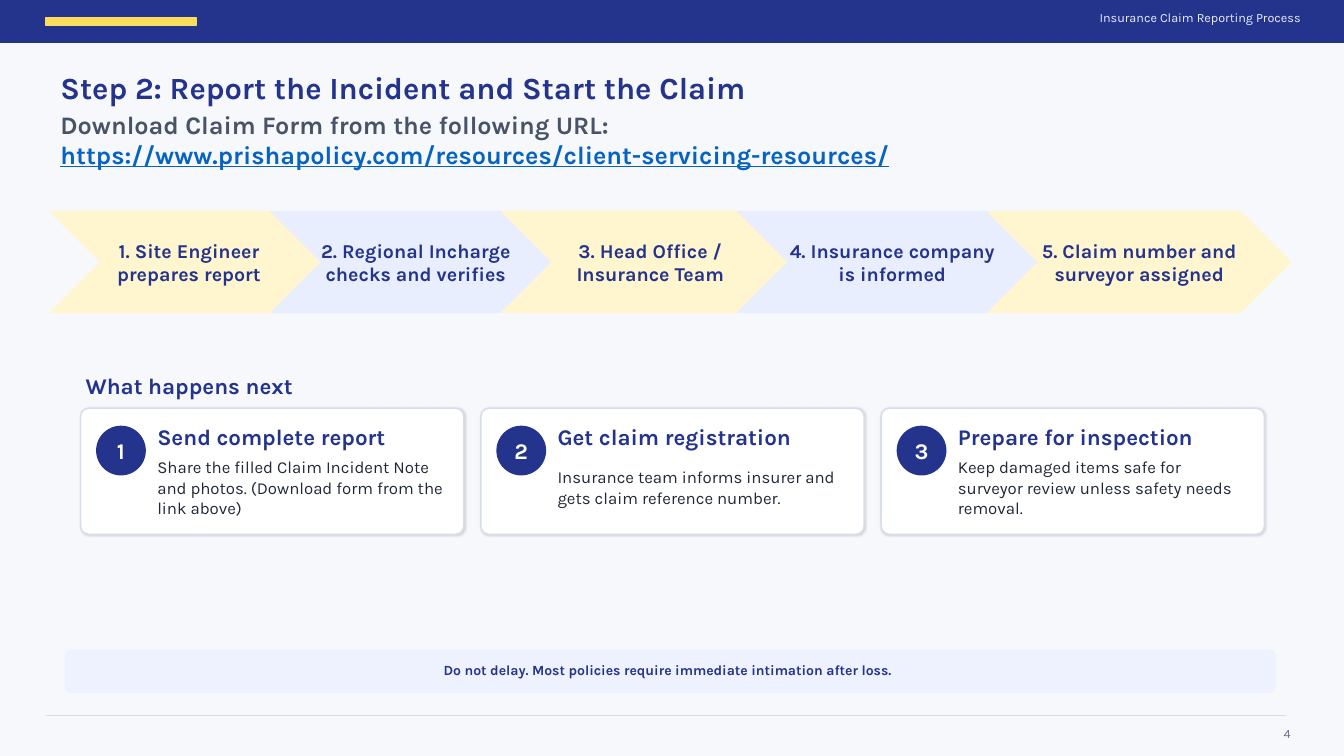
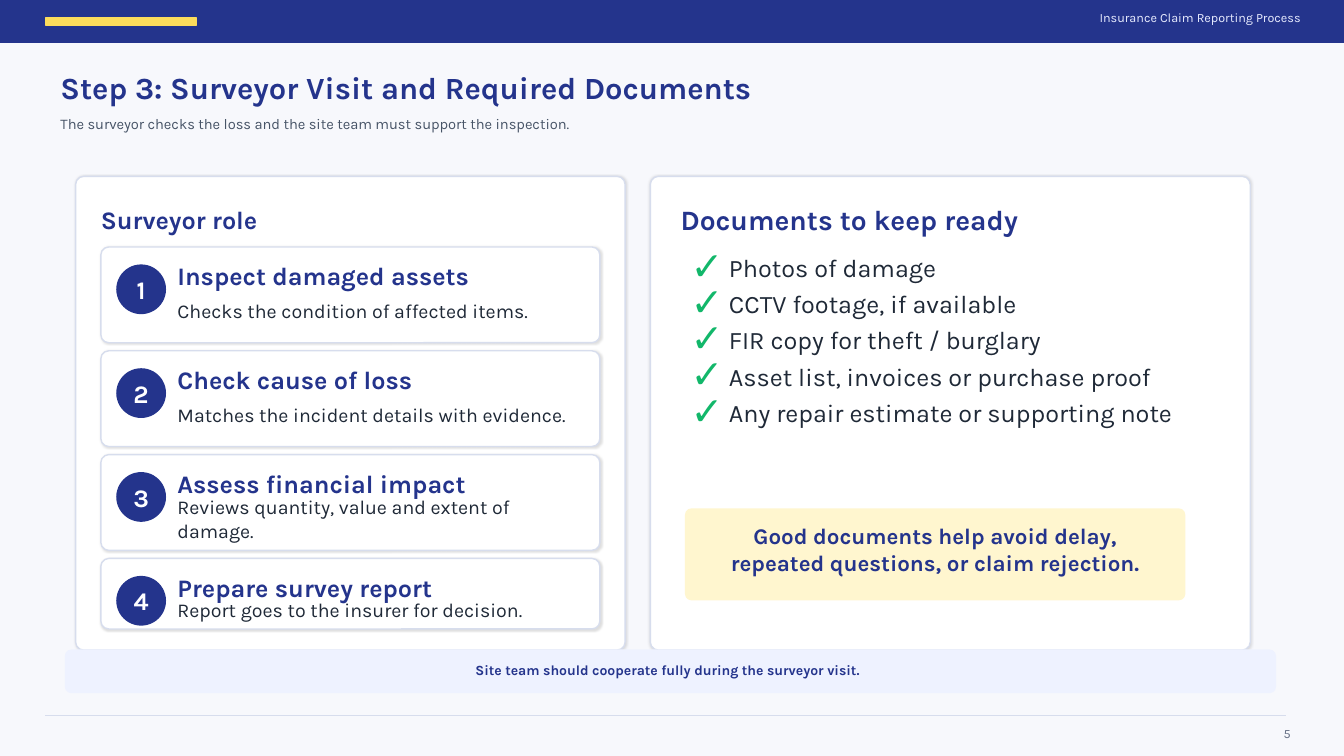
from typing import NamedTuple

from lxml import etree
from pptx import Presentation
from pptx import util as u
from pptx.dml.color import RGBColor
from pptx.enum import shapes, text
from pptx.oxml.ns import qn

NAVY = RGBColor(0x24, 0x34, 0x8C)
GOLD = RGBColor(0xFC, 0xDC, 0x5C)
CREAM = RGBColor(0xFF, 0xF6, 0xCF)
PALE_BLUE = RGBColor(0xE9, 0xEE, 0xFF)
NOTE_BLUE = RGBColor(0xEE, 0xF2, 0xFF)
HEADER_TEXT = RGBColor(0xE8, 0xEC, 0xFF)
BACKGROUND = RGBColor(0xF7, 0xF8, 0xFC)
RULE = RGBColor(0xD7, 0xDD, 0xED)
SLATE = RGBColor(0x47, 0x54, 0x67)
GREY = RGBColor(0x66, 0x70, 0x85)
INK = RGBColor(0x1F, 0x29, 0x37)
GREEN = RGBColor(0x12, 0xB7, 0x6A)
LINK = RGBColor(0x05, 0x63, 0xC1)
WHITE = RGBColor(0xFF, 0xFF, 0xFF)

FONT = "Karla"
WIDTH, HEIGHT = 13.33, 7.5
LEFT, CENTER, RIGHT = text.PP_ALIGN.LEFT, text.PP_ALIGN.CENTER, text.PP_ALIGN.RIGHT
KIND = shapes.MSO_SHAPE


class Box(NamedTuple):
    """Area of a slide in inches."""
    x: float
    y: float
    w: float
    h: float

    def inner(self, dx, dy, w, h):
        """Return an area placed from this one's top left corner."""
        return Box(self.x + dx, self.y + dy, w, h)

    def emu(self):
        """Return left, top, width and height as lengths."""
        return [u.Inches(length) for length in self]


def style(font, size, color, bold=False):
    """Set typeface, size, colour and weight."""
    font.name, font.size, font.bold = FONT, u.Pt(size), bold
    font.color.rgb = color


def write(frame, lines, size, color, bold=False, align=LEFT, margins=(0, 0, 0, 0), wrap=True):
    """Fill a text frame with equally formatted, vertically centred paragraphs."""
    frame.word_wrap = wrap
    frame.auto_size = text.MSO_AUTO_SIZE.NONE
    frame.vertical_anchor = text.MSO_ANCHOR.MIDDLE
    (frame.margin_left, frame.margin_top,
     frame.margin_right, frame.margin_bottom) = [u.Inches(m) for m in margins]
    frame.text = lines
    for paragraph in frame.paragraphs:
        paragraph.alignment = align
        style(paragraph.font, size, color, bold)
    return frame


def label(slide, box, lines, size, color, bold=False, align=LEFT):
    """Add a text box."""
    frame = slide.shapes.add_textbox(*box.emu()).text_frame
    return write(frame, lines, size, color, bold, align)


def block(slide, kind, box, fill, edge=None, radius=None):
    """Add a flat shape with an optional corner radius in inches."""
    shape = slide.shapes.add_shape(kind, *box.emu())
    shape.shadow.inherit = False
    shape.fill.solid()
    shape.fill.fore_color.rgb = fill
    shape.line.color.rgb = edge or fill
    shape.line.width = u.Pt(1)
    if radius:
        shape.adjustments[0] = radius / min(box.w, box.h)
    return shape


def panel(slide, box):
    """Add a white rounded panel with a soft shadow."""
    shape = block(slide, KIND.ROUNDED_RECTANGLE, box, WHITE, RULE, 0.08)
    effects = shape.element.spPr.find(qn("a:effectLst"))
    shadow = etree.SubElement(effects, qn("a:outerShdw"), blurRad=str(u.Pt(1.5)),
                              dist=str(u.Pt(0.5)), dir="2700000", algn="bl", rotWithShape="0")
    color = etree.SubElement(shadow, qn("a:srgbClr"), val="000000")
    etree.SubElement(color, qn("a:alpha"), val="12000")


def build_layout(layout, slide):
    """Draw the shared header and footer rule and move them to the layout."""
    layout.background.fill.solid()
    layout.background.fill.fore_color.rgb = BACKGROUND
    own = len(slide.shapes)
    block(slide, KIND.RECTANGLE, Box(0, 0, WIDTH, 0.42), NAVY)
    block(slide, KIND.RECTANGLE, Box(0.45, 0.18, 1.5, 0.07), GOLD)
    label(slide, Box(9.2, 0.08, 3.7, 0.18), "Insurance Claim Reporting Process",
          9, HEADER_TEXT, align=RIGHT)
    rule = slide.shapes.add_connector(
        shapes.MSO_CONNECTOR.STRAIGHT,
        u.Inches(0.45), u.Inches(7.1), u.Inches(12.75), u.Inches(7.1))
    rule.line.color.rgb = RULE
    rule.line.width = u.Pt(1)
    etree.SubElement(rule.element.spPr, qn("a:effectLst"))
    for number, shape in enumerate(list(slide.shapes)[own:], start=20):
        shape.element.xpath(".//p:cNvPr")[0].set("id", str(number))
        layout.shapes.element.append(shape.element)


def frame_slide(slide, heading, note, number):
    """Place the title, the closing note bar and the page number."""
    title = slide.shapes.title
    title.left, title.top, title.width, title.height = Box(0.6, 0.65, 8.8, 0.42).emu()
    write(title.text_frame, heading, 22, NAVY, True)
    bar = block(slide, KIND.ROUNDED_RECTANGLE, Box(0.65, 6.45, 12, 0.42), NOTE_BLUE, radius=0.06)
    write(bar.text_frame, note, 10, NAVY, True, CENTER, (0, 0, 0.06, 0.02))
    page = label(slide, Box(12.55, 7.15, 0.35, 0.18), number, 9, GREY, align=RIGHT)
    page.vertical_anchor = text.MSO_ANCHOR.TOP
    page.margin_right = u.Inches(0.1)
    page.margin_top = u.Inches(0.05)


def numbered_card(slide, box, number, heading, body, heading_size, body_size):
    """Place a card with a number disc, a heading and a body text."""
    panel(slide, box)
    disc = block(slide, KIND.OVAL, box.inner(0.16, 0.18, 0.48, 0.48), NAVY)
    write(disc.text_frame, str(number), heading_size, WHITE, True, CENTER, wrap=False)
    column = box.w - 0.92
    label(slide, box.inner(0.76, 0.16, column, 0.25), heading, heading_size, NAVY, True)
    label(slide, box.inner(0.76, 0.45, column, box.h - 0.58), body, body_size, INK)


def process_chain(slide, top, steps):
    """Place overlapping chevrons in alternating colours."""
    for index, (left, width, shift, caption) in enumerate(steps):
        step = block(slide, KIND.CHEVRON, Box(left, top, width, 1), (CREAM, PALE_BLUE)[index % 2])
        write(step.text_frame, caption, 14, NAVY, True, CENTER, (0, 0, shift, 0), wrap=False)


def check_list(slide, box, items, pitch):
    """Place a list with green check marks at a fixed line pitch in points."""
    frame = label(slide, box, "\n".join(items), 18, INK)
    for paragraph in frame.paragraphs:
        paragraph.line_spacing = u.Pt(pitch)
        props = paragraph._p.get_or_add_pPr()
        props.set("marL", str(u.Inches(0.38)))
        props.set("indent", str(-u.Inches(0.38)))
        bullet_color = etree.Element(qn("a:buClr"))
        etree.SubElement(bullet_color, qn("a:srgbClr"), val=str(GREEN))
        bullet_size = etree.Element(qn("a:buSzPct"), val="156000")
        bullet_font = etree.Element(qn("a:buFont"), typeface=FONT)
        bullet = etree.Element(qn("a:buChar"), char="✓")
        spacing = props.find(qn("a:lnSpc"))
        for setting in (bullet, bullet_font, bullet_size, bullet_color):
            spacing.addnext(setting)


def report_slide(slide):
    """Build the slide on reporting the incident."""
    frame_slide(slide, "Step 2: Report the Incident and Start the Claim",
                "Do not delay. Most policies require immediate intimation after loss.", "4")
    download = label(slide, Box(0.6, 1.08, 9.6, 0.61),
                     "Download Claim Form from the following URL: ", 18, SLATE, True)
    address = download.paragraphs[0].add_run()
    address.text = "https://www.prishapolicy.com/resources/client-servicing-resources/"
    address.font.color.rgb = LINK
    address.font.underline = True
    process_chain(slide, 2.1, [
        (0.5, 3, 0.25, "1. Site Engineer\nprepares report"),
        (2.69, 3.14, 0.27, "2. Regional Incharge\nchecks and verifies"),
        (4.98, 3.21, 0.27, "3. Head Office /\nInsurance Team"),
        (7.32, 3.34, 0.28, "4. Insurance company\nis informed"),
        (9.8, 3, 0, "5. Claim number and\nsurveyor assigned"),
    ])
    label(slide, Box(0.85, 3.7, 2.4, 0.25), "What happens next", 16, NAVY, True)
    actions = [
        ("Send complete report", "Share the filled Claim Incident Note and photos. "
                                 "(Download form from the link above)"),
        ("Get claim registration",
         "Insurance team informs insurer and gets claim reference number."),
        ("Prepare for inspection",
         "Keep damaged items safe for surveyor review unless safety needs removal."),
    ]
    for index, (heading, body) in enumerate(actions):
        card = Box(0.8 + 3.97 * index, 4.05, 3.8, 1.25)
        numbered_card(slide, card, index + 1, heading, body, 16, 12)


def surveyor_role(slide, box):
    """Place the panel with the surveyor's four tasks."""
    panel(slide, box)
    label(slide, box.inner(0.25, 0.3, 1.8, 0.25), "Surveyor role", 18, NAVY, True)
    tasks = [
        ("Inspect damaged assets", "Checks the condition of affected items.", 0.95),
        ("Check cause of loss", "Matches the incident details with evidence.", 0.95),
        ("Assess financial impact", "Reviews quantity, value and extent of damage.", 0.95),
        ("Prepare survey report", "Report goes to the insurer for decision.", 0.7),
    ]
    for index, (heading, body, height) in enumerate(tasks):
        card = box.inner(0.25, 0.7 + 1.03 * index, box.w - 0.5, height)
        numbered_card(slide, card, index + 1, heading, body, 18, 14)


def required_documents(slide, box):
    """Place the panel with the document checklist and its callout."""
    panel(slide, box)
    label(slide, box.inner(0.3, 0.3, 3.6, 0.25), "Documents to keep ready", 20, NAVY, True)
    check_list(slide, box.inner(0.4, 0.69, 5.32, 1.8), [
        "Photos of damage",
        "CCTV footage, if available",
        "FIR copy for theft / burglary",
        "Asset list, invoices or purchase proof",
        "Any repair estimate or supporting note",
    ], 25.92)
    callout = block(slide, KIND.ROUNDED_RECTANGLE, box.inner(0.35, 3.3, 4.95, 0.9),
                    CREAM, radius=0.06)
    write(callout.text_frame,
          "Good documents help avoid delay, repeated questions, or claim rejection.",
          16, NAVY, True, CENTER, (0.2, 0, 0.2, 0.1))


def survey_slide(slide):
    """Build the slide on the surveyor's visit."""
    label(slide, Box(0.6, 1.08, 9.6, 0.3),
          "The surveyor checks the loss and the site team must support the inspection.",
          10.5, SLATE)
    surveyor_role(slide, Box(0.75, 1.75, 5.45, 4.7))
    required_documents(slide, Box(6.45, 1.75, 5.95, 4.7))
    frame_slide(slide, "Step 3: Surveyor Visit and Required Documents",
                "Site team should cooperate fully during the surveyor visit.", "5")


def main():
    """Build and save the presentation."""
    deck = Presentation()
    deck.slide_width, deck.slide_height = u.Inches(WIDTH), u.Inches(HEIGHT)
    title_only = deck.slide_layouts[5]
    report = deck.slides.add_slide(title_only)
    build_layout(title_only, report)
    report_slide(report)
    survey_slide(deck.slides.add_slide(title_only))
    deck.save("out.pptx")


if __name__ == "__main__":
    main()
